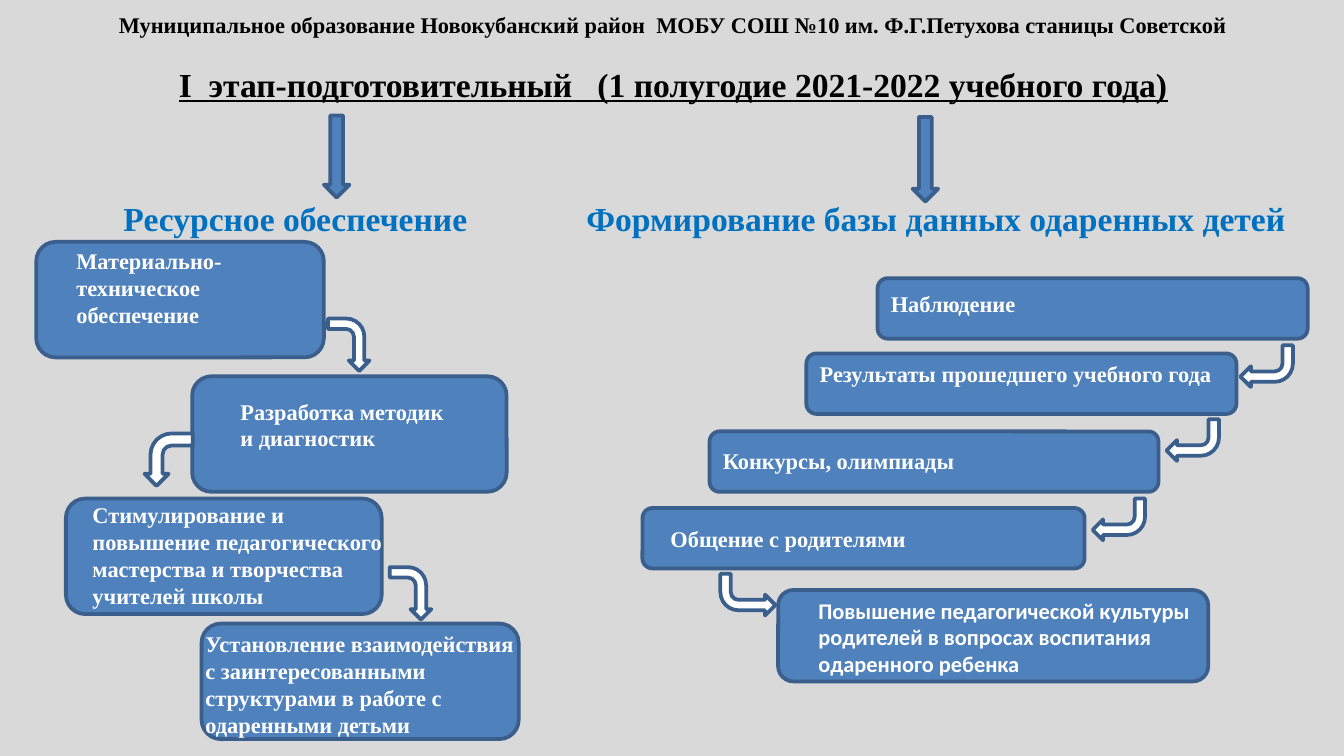
from pptx import Presentation
from pptx.dml.color import RGBColor
from pptx.enum import shapes, text
from pptx.util import Inches, Pt

COLORS = {"background": "D9D9D9", "box": "4F81BD", "outline": "3A5F8C",
          "heading": "0070C0", "white": "FFFFFF", "black": "000000"}
SERIF, SANS = "Times New Roman", "Calibri"

SCHOOL = "Муниципальное образование Новокубанский район  МОБУ СОШ №10 им. Ф.Г.Петухова станицы Советской"
STAGE = "I  этап-подготовительный   (1 полугодие 2021-2022 учебного года)"

# heading, frame, alignment
HEADINGS = [
    ("Ресурсное обеспечение", (0.82, 1.42, 3.15, 0.4), text.PP_ALIGN.LEFT),
    ("Формирование базы данных одаренных детей", (4.13, 1.42, 5.67, 0.4), text.PP_ALIGN.CENTER),
]

# box frame, text frame, paragraphs, font
STEPS = [
    ((0.27, 1.8, 2.14, 0.86), (0.47, 1.79, 1.73, 1.01),
     ["Материально-", "техническое", "обеспечение"], SERIF),
    ((1.43, 2.8, 2.34, 0.86), (1.69, 2.91, 1.82, 0.81),
     ["Разработка методик и диагностик"], SERIF),
    ((0.49, 3.71, 2.35, 0.86), (0.59, 3.68, 2.46, 1.21),
     ["Стимулирование и", "повышение педагогического",
      "мастерства и творчества", "учителей школы"], SERIF),
    ((1.5, 4.64, 2.36, 0.86), (1.43, 4.64, 2.59, 1.21),
     ["Установление взаимодействия с заинтересованными структурами "
      "в работе с одаренными детьми"], SERIF),
    ((6.53, 2.07, 3.2, 0.45), (6.53, 2.11, 2.2, 0.3), ["Наблюдение"], SERIF),
    ((6, 2.63, 3.2, 0.45), (6, 2.63, 3.18, 0.3),
     ["Результаты прошедшего учебного года"], SERIF),
    ((5.28, 3.21, 3.34, 0.45), (5.28, 3.28, 2.76, 0.3), ["Конкурсы, олимпиады"], SERIF),
    ((4.78, 3.78, 3.29, 0.45), (4.89, 3.86, 2.99, 0.3), ["Общение с родителями"], SERIF),
    ((5.79, 4.39, 3.2, 0.68), (5.99, 4.39, 3.19, 1.01),
     ["Повышение педагогической культуры родителей в вопросах воспитания "
      "одаренного ребенка"], SANS),
]

DOWN_ARROWS = [(2.41, 0.86, 0.19, 0.61), (6.79, 0.87, 0.19, 0.63)]

# frame, rotation, flips
BENT_ARROWS = [
    ((2.4, 2.41, 0.39, 0.31), 270, "HV"),
    ((1.06, 3.24, 0.39, 0.36), 270, "H"),
    ((2.86, 4.26, 0.39, 0.31), 270, "HV"),
    ((9.23, 2.57, 0.39, 0.31), 0, "HV"),
    ((8.68, 3.12, 0.39, 0.31), 0, "HV"),
    ((8.13, 3.71, 0.39, 0.31), 0, "HV"),
    ((5.36, 4.27, 0.41, 0.31), 0, "V"),
]


def rgb(name):
    return RGBColor.from_string(COLORS[name])


def inches(frame):
    return [Inches(v) for v in frame]


def add_run(p, words, size, color, font=SERIF, underline=None):
    r = p.add_run()
    r.text = words
    r.font.name, r.font.size, r.font.bold = font, Pt(size), True
    r.font.underline = underline
    r.font.color.rgb = rgb(color)


def add_text(s, frame, lines, size, color, font=SERIF, align=text.PP_ALIGN.LEFT):
    tf = s.shapes.add_textbox(*inches(frame)).text_frame
    tf.word_wrap = True
    for i, line in enumerate(lines):
        p = tf.add_paragraph() if i else tf.paragraphs[0]
        p.alignment = align
        add_run(p, line, size, color, font)


def add_shape(s, kind, frame, fill="box"):
    sp = s.shapes.add_shape(kind, *inches(frame))
    sp.shadow.inherit = False
    sp.fill.solid()
    sp.fill.fore_color.rgb = rgb(fill)
    sp.line.color.rgb = rgb("outline")
    sp.line.width = Pt(2)
    return sp


def add_title(s):
    title = s.shapes.title
    title.left, title.top, title.width, title.height = inches((0.09, 0.03, 9.84, 0.81))
    tf = title.text_frame
    tf.auto_size = text.MSO_AUTO_SIZE.NONE
    tf.vertical_anchor = text.MSO_ANCHOR.TOP
    tf.word_wrap = True
    school, stage = tf.paragraphs[0], tf.add_paragraph()
    school.alignment = stage.alignment = text.PP_ALIGN.CENTER
    stage.space_before = Pt(14)
    add_run(school, SCHOOL, 12, "black")
    add_run(stage, STAGE, 18, "black", underline=True)


def main():
    prs = Presentation()
    prs.slide_width = Inches(10)
    prs.slide_height = prs.slide_width * 9 // 16
    s = prs.slides.add_slide(prs.slide_layouts[5])
    s.background.fill.solid()
    s.background.fill.fore_color.rgb = rgb("background")

    add_title(s)
    for heading, frame, align in HEADINGS:
        add_text(s, frame, [heading], 18, "heading", align=align)
    for box, frame, lines, font in STEPS:
        add_shape(s, shapes.MSO_SHAPE.ROUNDED_RECTANGLE, box)
        add_text(s, frame, lines, 12, "white", font)
    for frame in DOWN_ARROWS:
        add_shape(s, shapes.MSO_SHAPE.DOWN_ARROW, frame)
    for frame, rotation, flips in BENT_ARROWS:
        arrow = add_shape(s, shapes.MSO_SHAPE.BENT_ARROW, frame, "white")
        arrow.rotation = rotation
        for axis in flips:
            arrow.element.spPr.xfrm.set(f"flip{axis}", "1")

    prs.save("out.pptx")


if __name__ == "__main__":
    main()
